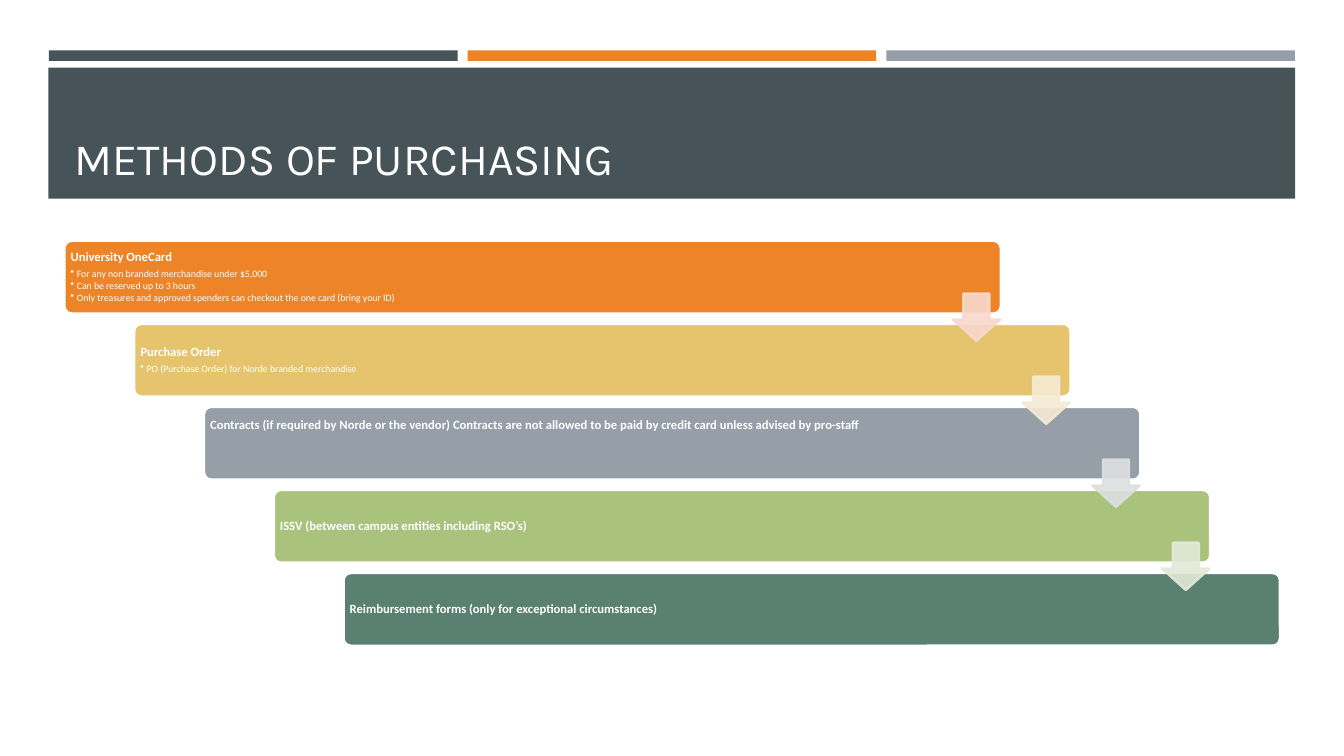
from lxml import etree
from pptx import Presentation
from pptx.dml.color import RGBColor
from pptx.enum.shapes import MSO_SHAPE as Preset
from pptx.enum.text import MSO_ANCHOR as Anchor, PP_ALIGN as Align
from pptx.oxml.ns import qn
from pptx.util import Pt

COLORS = {
    "slate": "465359", "orange": "ED8428", "gray": "969FA7",
    "gold": "E6C46D", "green": "A9C37C", "teal": "5A8071",
    "pale orange": "F8D9CD", "pale gold": "F5EAD4",
    "pale gray": "DDDFE1", "pale green": "E2E9D7",
    "white": "FFFFFF", "title": "FFFEFF",
}

METHODS = [
    ("orange", "University OneCard", [
        "For any non branded merchandise under $5,000",
        "Can be reserved up to 3 hours",
        "Only treasures and approved spenders can checkout the one card (bring your ID)",
    ]),
    ("gold", "Purchase Order", ["PO (Purchase Order) for Norde branded merchandise"]),
    ("gray", "Contracts (if required by Norde or the vendor) Contracts are not allowed "
             "to be paid by credit card unless advised by pro-staff", []),
    ("green", "ISSV (between campus entities including RSO’s)", []),
    ("teal", "Reimbursement forms (only for exceptional circumstances)", []),
]
BOTTOM_INSETS = {"gray": 29}


def rgb(name):
    return RGBColor.from_string(COLORS[name])


def add_block(slide, preset, box, fill, line=None):
    shape = slide.shapes.add_shape(preset, *map(Pt, box))
    shape.shadow.inherit = False
    shape.fill.solid()
    shape.fill.fore_color.rgb = rgb(fill)
    if line:
        shape.line.color.rgb = rgb(line)
        shape.line.width = Pt(1.75)
    else:
        shape.line.fill.background()
    return shape


def set_insets(frame, left, top, right, bottom):
    frame.margin_left, frame.margin_top = Pt(left), Pt(top)
    frame.margin_right, frame.margin_bottom = Pt(right), Pt(bottom)


def add_run(paragraph, text, font, size, color, bold=False):
    run = paragraph.add_run()
    run.text = text
    run.font.name = font
    run.font.size = Pt(size)
    run.font.bold = bold
    run.font.color.rgb = rgb(color)


def add_bullet(paragraph, indent):
    properties = paragraph._p.get_or_add_pPr()
    properties.set("marL", str(Pt(indent)))
    properties.set("indent", str(-Pt(indent)))
    etree.SubElement(properties, qn("a:buChar")).set("char", "•")


def set_opacity(shape, percent):
    for color in shape._element.spPr.iter(qn("a:srgbClr")):
        etree.SubElement(color, qn("a:alpha")).set("val", str(percent * 1000))


def add_accent_bars(slide, left, top, width, height):
    gap = 7.2
    bar_width = (width - 2 * gap) / 3
    for index, color in enumerate(["slate", "orange", "gray"]):
        bar_left = left + index * (bar_width + gap)
        add_block(slide, Preset.RECTANGLE, (bar_left, top, bar_width, height), color)


def add_title_band(slide, left, top, width, height):
    add_block(slide, Preset.RECTANGLE, (left, top, width, height), "slate")
    title = slide.shapes.add_textbox(
        Pt(left + 11.5), Pt(top + 7), Pt(width - 23), Pt(height - 13.5))
    frame = title.text_frame
    frame.word_wrap = True
    frame.vertical_anchor = Anchor.BOTTOM
    add_run(frame.paragraphs[0], "METHODS OF PURCHASING", "Karla", 32, "title")


def add_card(slide, box, color, heading, details):
    card = add_block(slide, Preset.ROUNDED_RECTANGLE, box, color, "white")
    card.adjustments[0] = 0.1
    frame = card.text_frame
    frame.word_wrap = True
    frame.vertical_anchor = Anchor.MIDDLE
    set_insets(frame, 2.9, 2.9, 60, BOTTOM_INSETS.get(color, 2.9))
    for index, text in enumerate([heading, *details]):
        paragraph = frame.add_paragraph() if index else frame.paragraphs[0]
        paragraph.alignment = Align.LEFT
        paragraph.line_spacing = 0.9
        paragraph.space_after = Pt(1 if index else 3)
        if index:
            add_bullet(paragraph, 4.5)
        add_run(paragraph, text, "Calibri", 7 if index else 9, "white", bold=not index)


def add_arrow(slide, box, color):
    arrow = add_block(slide, Preset.DOWN_ARROW, box, color, color)
    arrow.adjustments[0] = 0.55
    arrow.adjustments[1] = 0.45
    set_opacity(arrow, 90)


def add_staircase(slide, left, top, width, height):
    card_width, card_height, arrow_size = 668.9, 52, 33.8
    steps = len(METHODS) - 1
    step_x = (width - card_width) / steps
    step_y = (height - card_height) / steps
    for index, method in enumerate(METHODS):
        box = (left + index * step_x, top + index * step_y, card_width, card_height)
        add_card(slide, box, *method)
    for index, (color, *_) in enumerate(METHODS[:-1]):
        arrow_left = left + index * step_x + card_width - arrow_size - 0.5
        arrow_top = top + index * step_y + 37.7
        add_arrow(slide, (arrow_left, arrow_top, arrow_size, arrow_size), "pale " + color)


def main():
    presentation = Presentation()
    presentation.slide_width, presentation.slide_height = Pt(960), Pt(540)
    slide = presentation.slides.add_slide(presentation.slide_layouts[6])
    add_accent_bars(slide, 35, 36, 890, 7.5)
    add_title_band(slide, 34.6, 48.4, 890.6, 93.6)
    add_staircase(slide, 46, 172, 868.3, 289.3)
    presentation.save("out.pptx")


if __name__ == "__main__":
    main()
